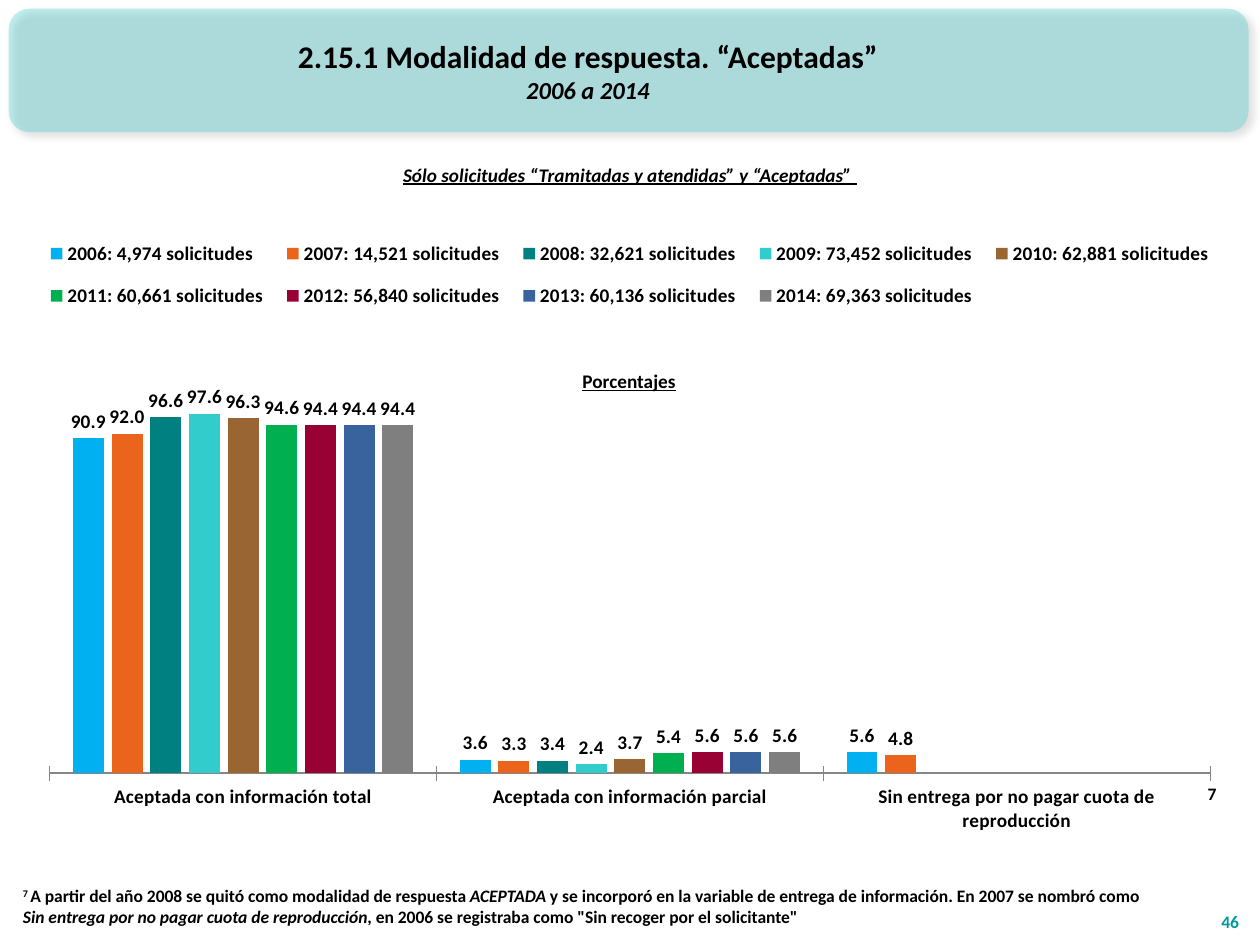
from lxml.etree import SubElement
from pptx import Presentation
from pptx.chart.data import CategoryChartData
from pptx.dml.color import RGBColor
from pptx.enum.chart import XL_CHART_TYPE as ChartType, XL_LABEL_POSITION as LabelSpot
from pptx.enum.chart import XL_LEGEND_POSITION as LegendSpot, XL_TICK_MARK as Tick
from pptx.enum.shapes import MSO_SHAPE as Preset
from pptx.enum.text import MSO_ANCHOR as Anchor, PP_ALIGN as Align
from pptx.oxml import parse_xml
from pptx.oxml.ns import nsdecls, qn
from pptx.util import Pt

CATEGORIES = ["Aceptada con información total", "Aceptada con información parcial",
              "Sin entrega por no pagar cuota de reproducción"]
YEARS = [
    ("2006: 4,974", "00B0F0", (90.9, 3.6, 5.6)),
    ("2007: 14,521", "EB641B", (92.0, 3.3, 4.8)),
    ("2008: 32,621", "008080", (96.6, 3.4, None)),
    ("2009: 73,452", "33CCCC", (97.6, 2.4, None)),
    ("2010: 62,881", "996633", (96.3, 3.7, None)),
    ("2011: 60,661", "00B050", (94.6, 5.4, None)),
    ("2012: 56,840", "990033", (94.4, 5.6, None)),
    ("2013: 60,136", "39639D", (94.4, 5.6, None)),
    ("2014: 69,363", "7F7F7F", (94.4, 5.6, None)),
]
FOOTNOTE = [
    ("7 ", "raised"),
    ("A partir del año 2008 se quitó como modalidad de respuesta ", ""),
    ("ACEPTADA", "italic"),
    (" y se incorporó en la variable de entrega de información. En 2007 se nombró como ", ""),
    ("Sin entrega por no pagar cuota de reproducción", "italic"),
    (', en 2006 se registraba como "Sin recoger por el solicitante"', ""),
]


def color(code):
    return RGBColor.from_string(code)


def set_layout(element, x, y, w, h, inner=False):
    """Place a chart part by fractions of the chart area."""
    for old in element.findall(qn("c:layout")):
        element.remove(old)
    target = '<c:layoutTarget val="inner"/>' if inner else ""
    sizes = "".join(f'<c:{tag} val="{value}"/>'
                    for tag, value in zip("xywh", (x, y, w, h)))
    layout = parse_xml(
        f'<c:layout {nsdecls("c")}><c:manualLayout>{target}<c:xMode val="edge"/>'
        f'<c:yMode val="edge"/>{sizes}</c:manualLayout></c:layout>')
    element.insert(0 if inner else 1, layout)


class Board:
    font = "Calibri"
    ink = "000000"

    def __init__(self, page):
        self.page = page

    def style(self, font, size, code=None, italic=None, underline=None):
        font.name, font.size, font.bold = self.font, Pt(size), True
        font.italic, font.underline = italic, underline
        font.color.rgb = color(code or self.ink)

    def banner(self, *place, fill, alpha):
        shape = self.page.shapes.add_shape(Preset.ROUNDED_RECTANGLE, *map(Pt, place))
        shape.fill.solid()
        shape.fill.fore_color.rgb = color(fill)
        shape.line.fill.background()
        properties = shape._element.spPr
        tint = properties.find(qn("a:solidFill"))[0]
        SubElement(tint, qn("a:alpha")).set("val", str(alpha * 1000))
        properties.append(parse_xml(
            f'<a:effectLst {nsdecls("a")}><a:outerShdw blurRad="{Pt(4)}" dist="{Pt(3)}" '
            'dir="2700000" algn="tl" rotWithShape="0"><a:srgbClr val="000000">'
            '<a:alpha val="40000"/></a:srgbClr></a:outerShdw></a:effectLst>'))

    def text(self, *place, lines, align=Align.LEFT, anchor=Anchor.TOP):
        """Add a box; each line is (wording or list of (wording, kind), style)."""
        box = self.page.shapes.add_textbox(*map(Pt, place))
        frame = box.text_frame
        frame.word_wrap, frame.vertical_anchor = True, anchor
        for index, (wording, style) in enumerate(lines):
            para = frame.add_paragraph() if index else frame.paragraphs[0]
            para.alignment = align
            self.style(para.font, **style)
            spans = [(wording, "")] if isinstance(wording, str) else wording
            for words, kind in spans:
                span = para.add_run()
                span.text = words
                if kind == "italic":
                    span.font.italic = True
                elif kind == "raised":
                    span.font._element.set("baseline", "30000")

    def columns(self, *place, categories, series):
        data = CategoryChartData(number_format="0.0")
        data.categories = categories
        for name, _, values in series:
            data.add_series(f"{name} solicitudes", values)
        chart = self.page.shapes.add_chart(
            ChartType.COLUMN_CLUSTERED, *map(Pt, place), data).chart
        self.style(chart.font, 11)
        chart.has_title = False
        chart.has_legend = True
        chart.legend.position = LegendSpot.TOP
        chart.legend.include_in_layout = False
        set_layout(chart.legend._element, 0.02, 0.03, 0.96, 0.16)
        set_layout(chart._chartSpace.chart.plotArea, 0.033, 0.283, 0.934, 0.6, inner=True)

        values_axis = chart.value_axis
        values_axis.visible = values_axis.has_major_gridlines = False
        values_axis.minimum_scale, values_axis.maximum_scale = 0, 105
        axis = chart.category_axis
        axis.major_tick_mark = Tick.CROSS
        axis.format.line.color.rgb = color("868686")

        plot = chart.plots[0]
        plot.gap_width, plot.overlap, plot.vary_by_categories = 150, -25, False
        for bars, (_, code, _) in zip(plot.series, series):
            bars.format.fill.solid()
            bars.format.fill.fore_color.rgb = color(code)
            labels = bars.data_labels
            labels.show_value = True
            labels.number_format, labels.number_format_is_linked = "0.0", False
            labels.position = LabelSpot.OUTSIDE_END


def main():
    deck = Presentation()
    deck.slide_width, deck.slide_height = Pt(720), Pt(540)
    board = Board(deck.slides.add_slide(deck.slide_layouts[6]))

    board.banner(5, 5, 708.5, 70.5, fill="33CCCC", alpha=30)
    board.text(6, 6.5, 660, 67.5, align=Align.CENTER, anchor=Anchor.MIDDLE, lines=[
        ("2.15.1 Modalidad de respuesta. “Aceptadas”", {"size": 18}),
        ("2006 a 2014", {"size": 14, "italic": True})])
    board.columns(5, 116.5, 710, 368.5, categories=CATEGORIES, series=YEARS)
    board.text(311, 207.5, 97, 21, align=Align.CENTER,
               lines=[("Porcentajes", {"size": 11, "underline": True})])
    board.text(686, 507, 29, 29, align=Align.RIGHT, anchor=Anchor.BOTTOM,
               lines=[("46", {"size": 10, "code": "009999"})])
    board.text(191, 89.5, 338, 21, align=Align.CENTER,
               lines=[("Sólo solicitudes “Tramitadas y atendidas” y “Aceptadas” ",
                       {"size": 11, "italic": True, "underline": True})])
    board.text(6, 502, 660, 31.5, anchor=Anchor.MIDDLE, lines=[(FOOTNOTE, {"size": 10})])
    board.text(683, 443.5, 19, 19.5, anchor=Anchor.MIDDLE, lines=[("7", {"size": 10})])
    deck.save("out.pptx")


if __name__ == "__main__":
    main()
